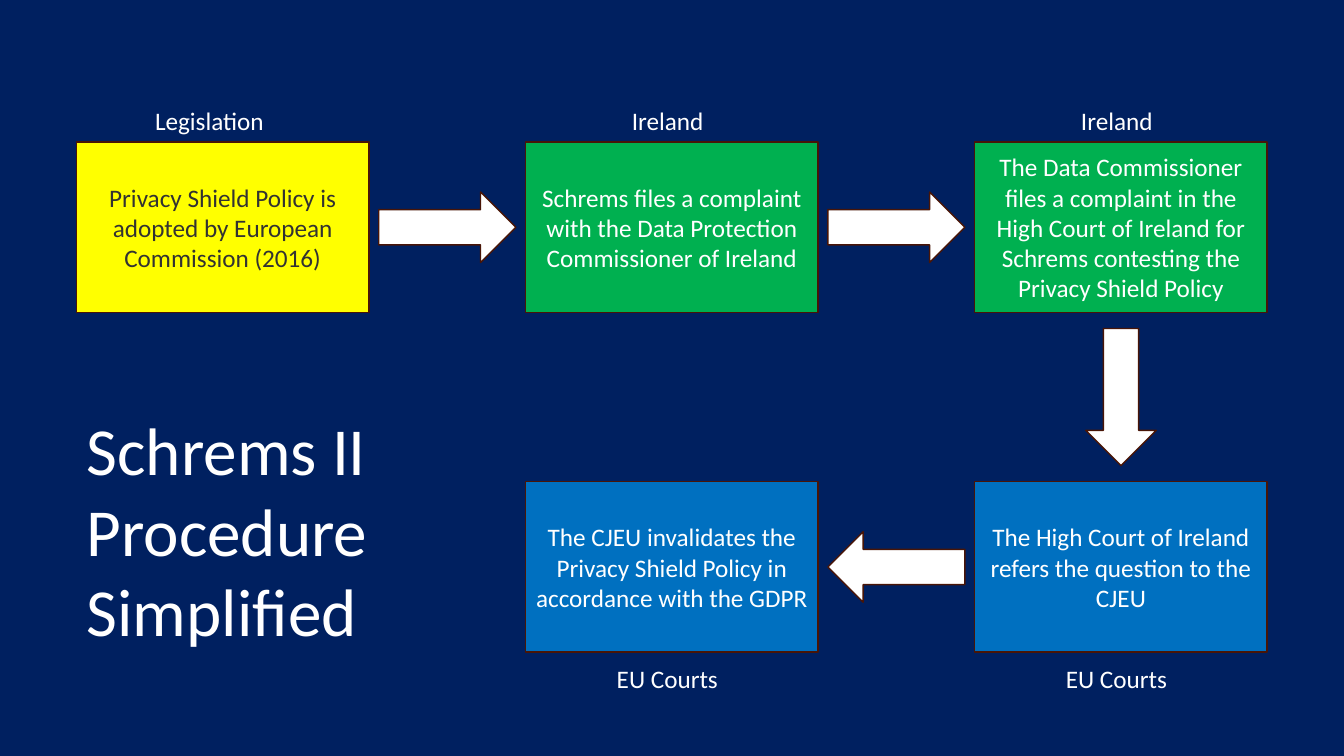
import dataclasses

import pptx
import pptx.dml.color
import pptx.enum.shapes
import pptx.enum.text
import pptx.util

Pt = pptx.util.Pt
Kind = pptx.enum.shapes.MSO_SHAPE
Align = pptx.enum.text.PP_ALIGN
Anchor = pptx.enum.text.MSO_ANCHOR

HUES = {
    "navy": "002060", "yellow": "FFFF00", "green": "00B050", "blue": "0070C0",
    "white": "FFFFFF", "dark": "323232", "edge": "481507",
}

# Grid of steps, in points
LEFT, TOP = 54.7, 101.5
STEP_X, STEP_Y = 320.8, 242.6
BOX_W, BOX_H = 208.8, 121.7
ARROW_W, ARROW_H = 97.9, 50.4
LABEL_H = 29


@dataclasses.dataclass
class Step:
    col: int
    row: int
    fill: str
    ink: str
    text: str
    label: str
    label_w: float

    @property
    def x(self) -> float:
        return LEFT + self.col * STEP_X

    @property
    def y(self) -> float:
        return TOP + self.row * STEP_Y


# Steps in the order of the procedure
STEPS = [
    Step(0, 0, "yellow", "dark",
         "Privacy Shield Policy is adopted by European Commission (2016)",
         "Legislation", 110.9),
    Step(1, 0, "green", "white",
         "Schrems files a complaint with the Data Protection Commissioner of Ireland",
         "Ireland", 71.3),
    Step(2, 0, "green", "white",
         "The Data Commissioner files a complaint in the High Court of Ireland "
         "for Schrems contesting the Privacy Shield Policy",
         "Ireland", 71.3),
    Step(2, 1, "blue", "white",
         "The High Court of Ireland refers the question to the CJEU",
         "EU Courts", 92.9),
    Step(1, 1, "blue", "white",
         "The CJEU invalidates the Privacy Shield Policy in accordance with the GDPR",
         "EU Courts", 92.9),
]


def hue(name: str) -> pptx.dml.color.RGBColor:
    return pptx.dml.color.RGBColor.from_string(HUES[name])


def write(frame, text: str, size: float, ink: str, align) -> None:
    frame.word_wrap = True
    frame.text = text
    para = frame.paragraphs[0]
    para.alignment = align
    para.line_spacing = 1.0
    para.font.size = Pt(size)
    para.font.name = "Calibri"
    para.font.color.rgb = hue(ink)


def draw_shape(slide, kind, x: float, y: float, w: float, h: float, fill: str):
    shape = slide.shapes.add_shape(kind, Pt(x), Pt(y), Pt(w), Pt(h))
    shape.shadow.inherit = False
    shape.fill.solid()
    shape.fill.fore_color.rgb = hue(fill)
    shape.line.color.rgb = hue("edge")
    shape.line.width = Pt(1)
    return shape


def draw_step(slide, step: Step) -> None:
    box = draw_shape(slide, Kind.RECTANGLE, step.x, step.y, BOX_W, BOX_H, step.fill)
    box.text_frame.vertical_anchor = Anchor.MIDDLE
    write(box.text_frame, step.text, 18, step.ink, Align.CENTER)

    # Label above the top row, below the bottom row
    y = step.y + BOX_H + 4.3 if step.row else step.y - 29.5
    x = step.x + (BOX_W - step.label_w) / 2
    label = slide.shapes.add_textbox(Pt(x), Pt(y), Pt(step.label_w), Pt(LABEL_H))
    write(label.text_frame, step.label, 18, "white", Align.LEFT)


def draw_arrow(slide, start: Step, end: Step) -> None:
    # Halfway between the two boxes, turned towards the second
    x = (start.x + end.x + BOX_W - ARROW_W) / 2
    y = (start.y + end.y + BOX_H - ARROW_H) / 2
    arrow = draw_shape(slide, Kind.RIGHT_ARROW, x, y, ARROW_W, ARROW_H, "white")
    if end.row > start.row:
        arrow.rotation = 90
    elif end.col < start.col:
        arrow.rotation = 180


def draw_title(slide, text: str) -> None:
    title = slide.shapes.title
    title.left, title.top = Pt(LEFT), Pt(288)
    title.width, title.height = Pt(370.8), Pt(181.4)
    frame = title.text_frame
    frame.auto_size = pptx.enum.text.MSO_AUTO_SIZE.NONE
    frame.vertical_anchor = Anchor.TOP
    write(frame, text, 48, "white", Align.LEFT)


def main() -> None:
    deck = pptx.Presentation()
    deck.slide_width, deck.slide_height = Pt(960), Pt(540)
    slide = deck.slides.add_slide(deck.slide_layouts.get_by_name("Title Only"))
    slide.background.fill.solid()
    slide.background.fill.fore_color.rgb = hue("navy")

    draw_title(slide, "Schrems II Procedure Simplified")
    for step in STEPS:
        draw_step(slide, step)
    for start, end in zip(STEPS, STEPS[1:]):
        draw_arrow(slide, start, end)

    deck.save("out.pptx")


if __name__ == "__main__":
    main()
